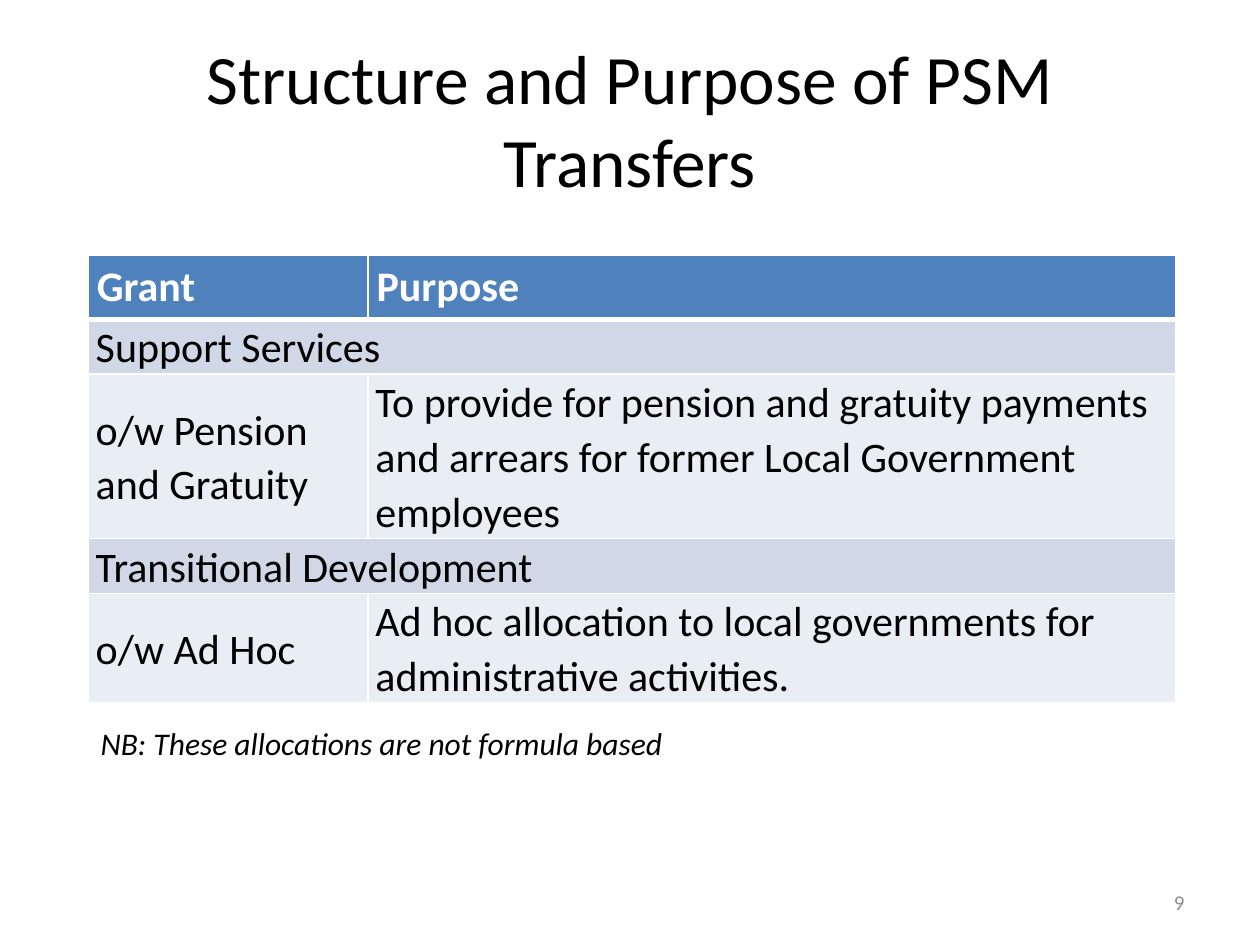
"""Slide with a table of PSM grants and their purposes."""
from dataclasses import dataclass

from lxml import etree
from pptx import Presentation
from pptx import util as u
from pptx.dml.color import RGBColor
from pptx.enum import text
from pptx.oxml.ns import qn

W, H = 10, 7.5


@dataclass(frozen=True)
class Theme:
    """Colours, font and type sizes of the slide."""
    font: str = "Calibri"
    ink: str = "000000"
    paper: str = "FFFFFF"
    muted: str = "8C8C8C"
    head: str = "4F81BD"
    group: str = "D0D8E8"
    item: str = "E9EDF4"
    title: float = 39.6
    body: float = 24
    note: float = 18
    small: float = 12


T = Theme()
COLS = (2.22, 6.41)
LINE = 0.435
ROWS = (
    (0.51, "Grant", "Purpose"),
    (LINE, "Support Services", None),
    (3 * LINE, "o/w Pension and Gratuity",
     "To provide for pension and gratuity payments and arrears "
     "for former Local Government employees"),
    (LINE, "Transitional Development", None),
    (2 * LINE, "o/w Ad Hoc",
     "Ad hoc allocation to local governments for administrative activities."),
)


def write(tf, words, size, color=T.ink, bold=False, italic=False,
          align=text.PP_ALIGN.LEFT, spacing=None):
    """Put formatted text into the first paragraph of a text frame."""
    tf.word_wrap = True
    p = tf.paragraphs[0]
    p.alignment, p.line_spacing = align, spacing
    r = p.add_run()
    r.text = words
    f = r.font
    f.name, f.size, f.bold, f.italic = T.font, u.Pt(size), bold, italic
    f.color.rgb = RGBColor.from_string(color)


def add_label(s, x, y, w, h, words, size, anchor=text.MSO_ANCHOR.MIDDLE,
              inset=0.1, **fmt):
    """Add a text box placed by shares of the slide's size."""
    sp = s.shapes.add_textbox(u.Inches(x * W), u.Inches(y * H),
                              u.Inches(w * W), u.Inches(h * H))
    tf = sp.text_frame
    tf.vertical_anchor = anchor
    tf.margin_left = tf.margin_right = u.Inches(inset)
    write(tf, words, size, **fmt)


def add_borders(cell, bottom):
    """Draw white lines on all four sides of a cell."""
    pr = cell._tc.get_or_add_tcPr()
    for i, (side, pt) in enumerate(zip("LRTB", (1, 1, 1, bottom))):
        ln = etree.Element(qn(f"a:ln{side}"), w=str(u.Pt(pt)))
        fill = etree.SubElement(ln, qn("a:solidFill"))
        etree.SubElement(fill, qn("a:srgbClr"), val=T.paper)
        pr.insert(i, ln)


def style_cell(cell, fill, header):
    """Set fill, margins, anchor and borders of a cell."""
    cell.fill.solid()
    cell.fill.fore_color.rgb = RGBColor.from_string(fill)
    cell.margin_left = cell.margin_right = u.Inches(0.07 if header else 0.06)
    cell.margin_top = cell.margin_bottom = u.Inches(0.05 if header else 0)
    cell.vertical_anchor = (text.MSO_ANCHOR.TOP if header
                            else text.MSO_ANCHOR.MIDDLE)
    add_borders(cell, 3 if header else 1)


def add_grants(s, x, y):
    """Add the table, merging each group row across both columns."""
    heights = [row[0] for row in ROWS]
    tbl = s.shapes.add_table(len(ROWS), len(COLS), u.Inches(x * W),
                             u.Inches(y * H), u.Inches(sum(COLS)),
                             u.Inches(sum(heights))).table
    for col, w in zip(tbl.columns, COLS):
        col.width = u.Inches(w)
    for i, (h, *words) in enumerate(ROWS):
        tbl.rows[i].height = u.Inches(h)
        header, group = i == 0, words[1] is None
        fill = T.head if header else T.group if group else T.item
        for j, label in enumerate(words):
            cell = tbl.cell(i, j)
            style_cell(cell, fill, header)
            if label:
                write(cell.text_frame, label, T.body, bold=header,
                      color=T.paper if header else T.ink,
                      spacing=None if header else 1.07)
        if group:
            tbl.cell(i, 0).merge(tbl.cell(i, 1))


def main():
    """Build and save the slide."""
    prs = Presentation()
    prs.slide_width, prs.slide_height = u.Inches(W), u.Inches(H)
    s = prs.slides.add_slide(prs.slide_layouts[6])
    add_label(s, 0.05, 0.04, 0.9, 0.17, "Structure and Purpose of PSM Transfers",
              T.title, inset=0.15, align=text.PP_ALIGN.CENTER)
    add_grants(s, 0.07, 0.27)
    add_label(s, 0.72, 0.93, 0.23, 0.05, "9", T.small, color=T.muted,
              align=text.PP_ALIGN.RIGHT)
    add_label(s, 0.07, 0.76, 0.78, 0.05,
              "NB: These allocations are not formula based", T.note,
              anchor=text.MSO_ANCHOR.TOP, italic=True)
    prs.save("out.pptx")


if __name__ == "__main__":
    main()
